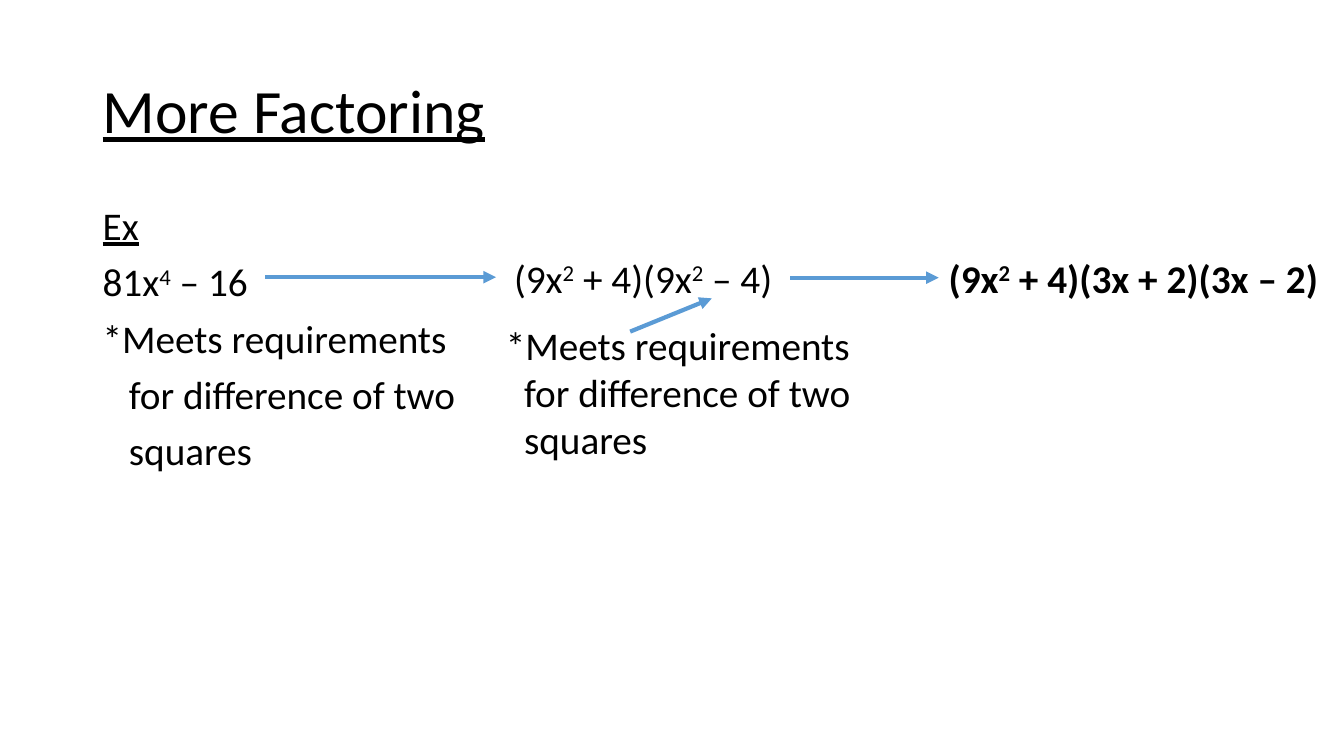
from lxml import etree
from pptx import Presentation
from pptx.dml.color import RGBColor
from pptx.enum import shapes, text
from pptx.oxml.ns import qn
from pptx.util import Inches, Pt

BLACK = RGBColor(0x00, 0x00, 0x00)
ARROW_BLUE = RGBColor(0x5B, 0x9B, 0xD5)
FONT = "Calibri"
BODY_SIZE = 28

SPACED = {"line_spacing": 0.9, "space_before": Pt(10)}
FITTED = {"word_wrap": False, "auto_size": text.MSO_AUTO_SIZE.SHAPE_TO_FIT_TEXT}
WRAPPED = {"word_wrap": True, "auto_size": text.MSO_AUTO_SIZE.NONE}


def set_attributes(target, values):
    for name, value in values.items():
        setattr(target, name, value)


def add_runs(paragraph, line, font_format):
    """Write a line in which carets enclose each superscript: x^2^."""
    for index, piece in enumerate(line.split("^")):
        if not piece:
            continue
        run = paragraph.add_run()
        run.text = piece
        set_attributes(run.font, font_format)
        run.font.color.rgb = BLACK
        if index % 2:
            run.font._element.set("baseline", "30000")


def add_text(slide, box, lines, frame_format, paragraph_format=None, size=BODY_SIZE):
    """Add lines given as (text, left indent in inches, extra font values)."""
    shape = slide.shapes.add_textbox(*map(Inches, box))
    frame = shape.text_frame
    set_attributes(frame, frame_format)
    for index, (line, indent, extra) in enumerate(lines):
        paragraph = frame.add_paragraph() if index else frame.paragraphs[0]
        set_attributes(paragraph, paragraph_format or {})
        if indent:
            paragraph._p.get_or_add_pPr().set("marL", str(Inches(indent)))
        add_runs(paragraph, line, {"name": FONT, "size": Pt(size), **extra})
    return shape


def add_arrow(slide, start, end):
    arrow = slide.shapes.add_connector(
        shapes.MSO_CONNECTOR.STRAIGHT, *map(Inches, (*start, *end)))
    set_attributes(arrow.line, {"width": Pt(3)})
    arrow.line.color.rgb = ARROW_BLUE
    line = arrow.line._get_or_add_ln()
    etree.SubElement(line, qn("a:tailEnd"), type="triangle")
    etree.SubElement(arrow._element.spPr, qn("a:effectLst"))
    return arrow


def requirement_lines(indent):
    return [("*Meets requirements", 0, {}),
            ("for difference of two", indent, {}),
            ("squares", indent, {})]


def main():
    presentation = Presentation()
    presentation.slide_width = Inches(13.33)
    presentation.slide_height = Inches(7.5)
    slide = presentation.slides.add_slide(presentation.slide_layouts[6])

    underlined = {"underline": True}
    add_text(slide, (0.92, 0.4, 11.5, 1.45), [("More Factoring", 0, underlined)],
             {**WRAPPED, "vertical_anchor": text.MSO_ANCHOR.MIDDLE},
             {"line_spacing": 0.9}, 44)
    add_text(slide, (0.92, 2, 3.79, 4.76),
             [("Ex", 0, underlined), ("81x^4^ – 16", 0, {}), *requirement_lines(0.26)],
             WRAPPED, SPACED)

    first_factors = add_text(slide, (5, 2.47, 2.84, 0.57),
                             [("(9x^2^ + 4)(9x^2^ – 4)", 0, {})], FITTED)
    add_text(slide, (4.92, 3.14, 3.74, 1.51), requirement_lines(0.18), FITTED)
    full_factors = add_text(slide, (9.31, 2.47, 3.94, 0.57),
                            [("(9x^2^ + 4)(3x + 2)(3x – 2)", 0, {"bold": True})], FITTED)

    add_arrow(slide, (2.63, 2.75), (4.92, 2.75))
    add_arrow(slide, (6.25, 3.29), (7.06, 2.96))
    factors_arrow = add_arrow(slide, (7.84, 2.75), (9.31, 2.75))
    factors_arrow.begin_connect(first_factors, 3)
    factors_arrow.end_connect(full_factors, 1)

    presentation.save("out.pptx")


if __name__ == "__main__":
    main()
